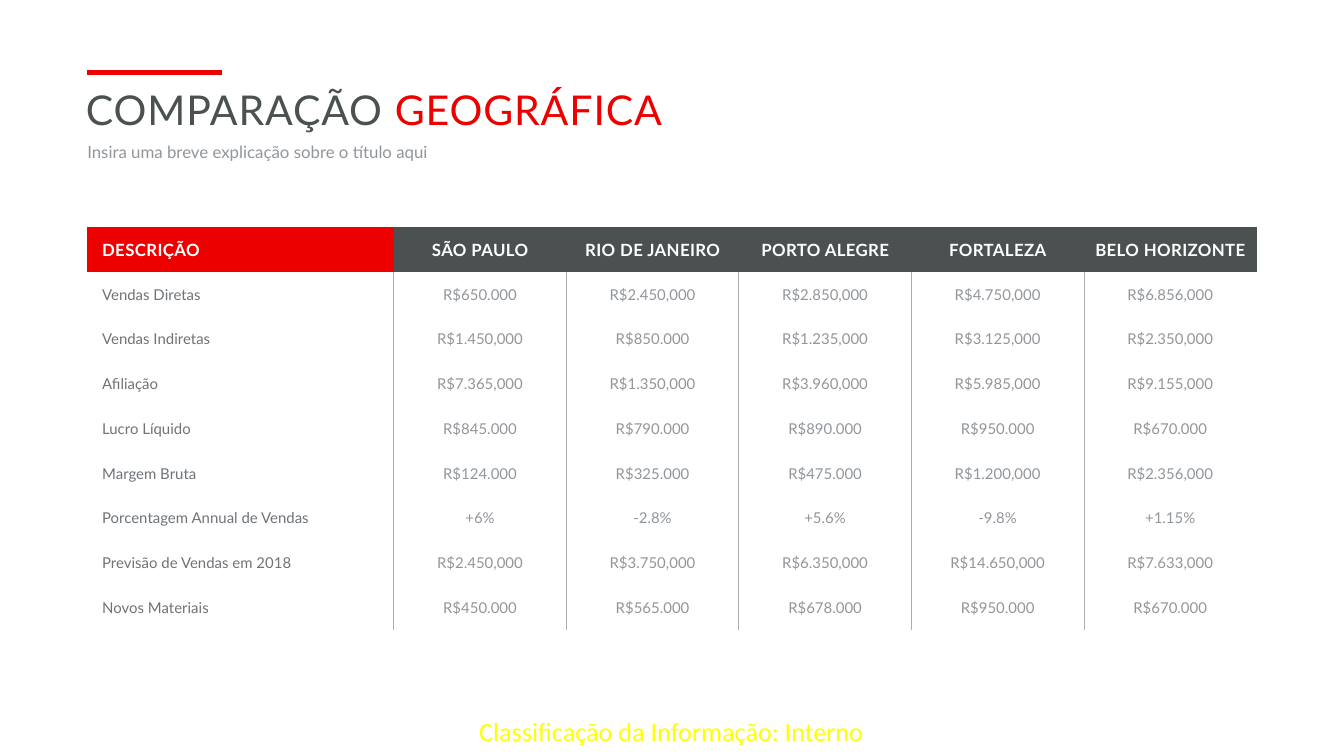
from dataclasses import dataclass

from lxml.etree import SubElement
from pptx import Presentation
from pptx.dml.color import RGBColor
from pptx.enum.shapes import MSO_CONNECTOR
from pptx.enum.text import MSO_ANCHOR, PP_ALIGN
from pptx.oxml.ns import qn
from pptx.util import Inches, Pt


@dataclass(frozen=True)
class Theme:
    font: str = "Lato"
    label_font: str = "Calibri"
    red: str = "EC0000"
    dark: str = "4B5050"
    label: str = "6E7378"
    muted: str = "91969B"
    rule: str = "AAAFB4"
    white: str = "FFFFFF"
    yellow: str = "FFFF00"
    title_size: float = 22
    text_size: float = 9
    cell_size: float = 8
    footer_size: float = 14


THEME = Theme()
SLIDE_WIDTH = 10
SLIDE_HEIGHT = SLIDE_WIDTH * 9 / 16
LEFT, WIDTH = 0.65, 8.7
TABLE_TOP, TABLE_HEIGHT = 1.69, 3
LABEL_WIDTH = 2.28

HEADER = ["DESCRIÇÃO", "SÃO PAULO", "RIO DE JANEIRO", "PORTO ALEGRE",
          "FORTALEZA", "BELO HORIZONTE"]
ROWS = [
    ["Vendas Diretas", "R$650.000", "R$2.450,000", "R$2.850,000", "R$4.750,000", "R$6.856,000"],
    ["Vendas Indiretas", "R$1.450,000", "R$850.000", "R$1.235,000", "R$3.125,000", "R$2.350,000"],
    ["Afiliação", "R$7.365,000", "R$1.350,000", "R$3.960,000", "R$5.985,000", "R$9.155,000"],
    ["Lucro Líquido", "R$845.000", "R$790.000", "R$890.000", "R$950.000", "R$670.000"],
    ["Margem Bruta", "R$124.000", "R$325.000", "R$475.000", "R$1.200,000", "R$2.356,000"],
    ["Porcentagem Annual de Vendas", "+6%", "-2.8%", "+5.6%", "-9.8%", "+1.15%"],
    ["Previsão de Vendas em 2018", "R$2.450,000", "R$3.750,000", "R$6.350,000",
     "R$14.650,000", "R$7.633,000"],
    ["Novos Materiais", "R$450.000", "R$565.000", "R$678.000", "R$950.000", "R$670.000"],
]


def style_span(span, size, color, font=THEME.font, bold=False, spacing=0):
    """Format a run; spacing is the letter spacing in points."""
    span.font.name = font
    span.font.size = Pt(size)
    span.font.bold = bold
    span.font.color.rgb = RGBColor.from_string(color)
    if spacing:
        span.font._element.set("spc", str(round(spacing * 100)))


def add_text(page, left, top, width, height, spans, size, font=THEME.font, spacing=0):
    """Add a one-paragraph box from (text, colour) spans and return its frame."""
    box = page.shapes.add_textbox(Inches(left), Inches(top), Inches(width), Inches(height))
    frame = box.text_frame
    frame.word_wrap = True
    frame.margin_left = frame.margin_right = frame.margin_top = frame.margin_bottom = 0
    for text, color in spans:
        span = frame.paragraphs[0].add_run()
        span.text = text
        style_span(span, size, color, font, spacing=spacing)
    return frame


def add_accent_line(page):
    line = page.shapes.add_connector(MSO_CONNECTOR.STRAIGHT, Inches(LEFT), Inches(0.54),
                                     Inches(LEFT + 1), Inches(0.54))
    line.line.color.rgb = RGBColor.from_string(THEME.red)
    line.line.width = Pt(2.25)
    SubElement(line._element.spPr, qn("a:effectLst"))


def set_borders(cell, ruled_sides):
    """Draw a thin rule on the given sides and clear the others."""
    props = cell._tc.get_or_add_tcPr()
    for side in "LRTB":
        border = SubElement(props, qn(f"a:ln{side}"))
        if side in ruled_sides:
            border.set("w", str(Pt(0.5)))
            fill = SubElement(border, qn("a:solidFill"))
            SubElement(fill, qn("a:srgbClr")).set("val", THEME.rule)
        else:
            SubElement(border, qn("a:noFill"))


def fill_cell(cell, text, row, column):
    is_header, is_label = row == 0, column == 0
    sides = ""
    if not is_header:
        sides += "" if is_label else "L"
        sides += "" if column == len(HEADER) - 1 else "R"
    set_borders(cell, sides)
    if is_header:
        cell.fill.solid()
        cell.fill.fore_color.rgb = RGBColor.from_string(THEME.red if is_label else THEME.dark)
    else:
        cell.fill.background()

    cell.vertical_anchor = MSO_ANCHOR.MIDDLE
    cell.margin_left = Inches(0.11 if is_label else 0.04)
    cell.margin_right = Inches(0.04)
    cell.margin_top = cell.margin_bottom = Inches(0.02)
    cell.text_frame.text = text
    para = cell.text_frame.paragraphs[0]
    para.alignment = PP_ALIGN.LEFT if is_label else PP_ALIGN.CENTER
    if is_header:
        style_span(para.runs[0], THEME.text_size, THEME.white, bold=True, spacing=0.2)
    else:
        style_span(para.runs[0], THEME.cell_size, THEME.label if is_label else THEME.muted)


def add_comparison_table(page):
    lines = [HEADER, *ROWS]
    table = page.shapes.add_table(len(lines), len(HEADER), Inches(LEFT), Inches(TABLE_TOP),
                                  Inches(WIDTH), Inches(TABLE_HEIGHT)).table
    table.horz_banding = False
    city_width = (WIDTH - LABEL_WIDTH) / (len(HEADER) - 1)
    for index, column in enumerate(table.columns):
        column.width = Inches(city_width if index else LABEL_WIDTH)
    for row, texts in enumerate(lines):
        table.rows[row].height = Inches(TABLE_HEIGHT / len(lines))
        for column, text in enumerate(texts):
            fill_cell(table.cell(row, column), text, row, column)


def main():
    deck = Presentation()
    deck.slide_width, deck.slide_height = Inches(SLIDE_WIDTH), Inches(SLIDE_HEIGHT)
    page = deck.slides.add_slide(deck.slide_layouts[6])

    footer = add_text(page, 3.34, 5.26, 3.31, 0.36,
                      [("Classificação da Informação: Interno", THEME.yellow)],
                      THEME.footer_size, THEME.label_font)
    footer.vertical_anchor = MSO_ANCHOR.MIDDLE
    footer.paragraphs[0].alignment = PP_ALIGN.CENTER

    add_accent_line(page)
    add_text(page, 0.64, 0.63, WIDTH, 0.42,
             [("COMPARAÇÃO ", THEME.dark), ("GEOGRÁFICA", THEME.red)],
             THEME.title_size, spacing=0.5)
    subtitle = add_text(page, LEFT, 1.04, WIDTH, 0.15,
                        [("Insira uma breve explicação sobre o título aqui", THEME.muted)],
                        THEME.text_size)
    subtitle.paragraphs[0].line_spacing = Pt(12)
    add_comparison_table(page)
    deck.save("out.pptx")


if __name__ == "__main__":
    main()
